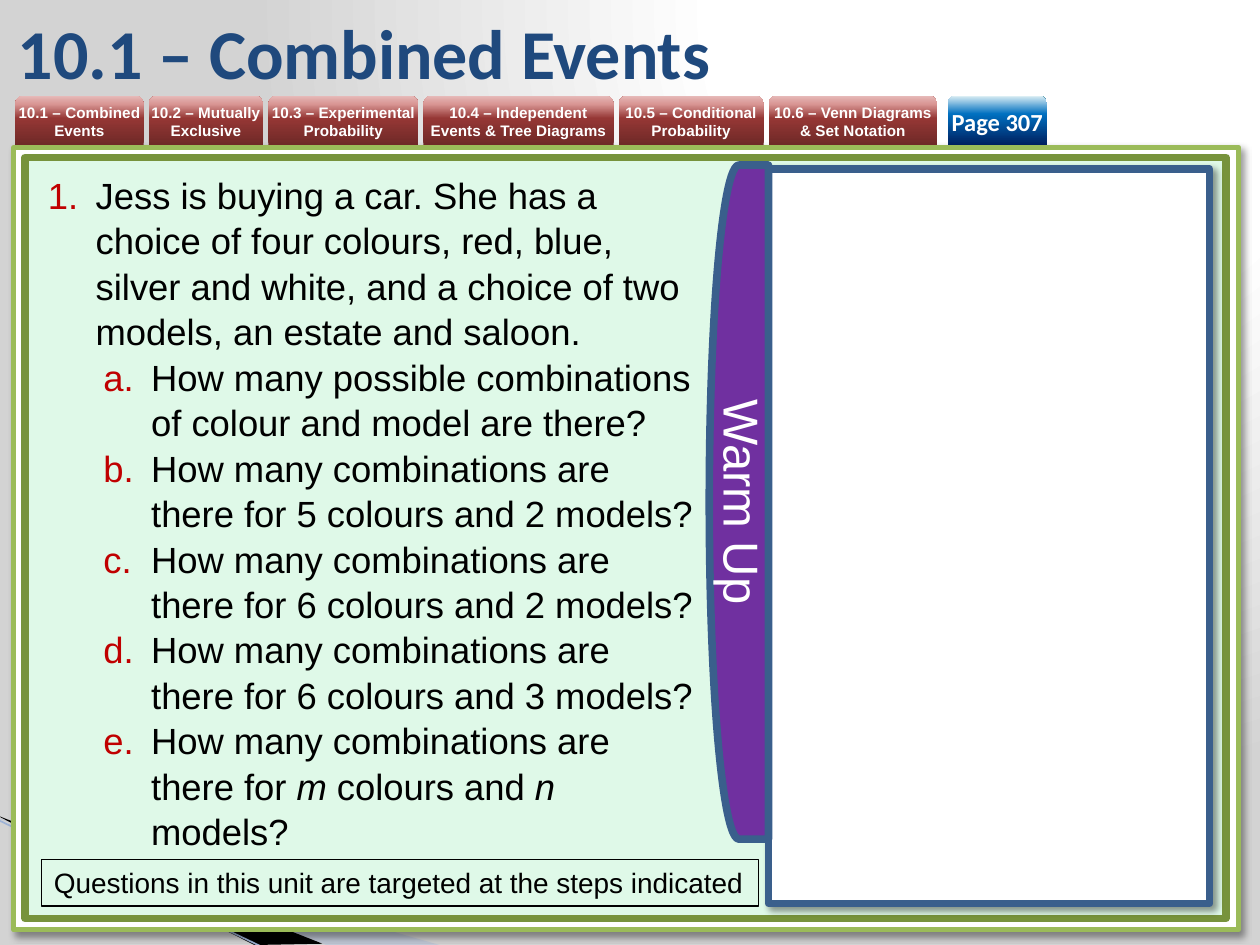
from lxml import etree
from pptx import Presentation
from pptx.dml.color import RGBColor
from pptx.enum.shapes import MSO_CONNECTOR, MSO_SHAPE
from pptx.enum.text import MSO_ANCHOR, MSO_AUTO_SIZE, PP_ALIGN
from pptx.oxml.ns import qn
from pptx.util import Inches, Pt

RECT = MSO_SHAPE.RECTANGLE
TAB = MSO_SHAPE.ROUND_2_SAME_RECTANGLE
DELAY = MSO_SHAPE.FLOWCHART_DELAY
STRAIGHT = MSO_CONNECTOR.STRAIGHT
LEFT, CENTER = PP_ALIGN.LEFT, PP_ALIGN.CENTER
TOP, MIDDLE = MSO_ANCHOR.TOP, MSO_ANCHOR.MIDDLE
NO_FIT = MSO_AUTO_SIZE.NONE

BLUE_EDGE = "3A5F8C"
UPWARD = ("lin", {"ang": "16200000", "scaled": "0"})
BACKDROP = [(0, "FFFFFF"), (40, "FFFFFF"), (100, "D3D3D3")]
RED_STOPS = [(0, "6F2927"), (54, "953735"), (83, "D99694"), (100, "E6B9B8")]
BLUE_STOPS = [(0, "002060"), (63, "0070C0"), (100, "DBEEF4")]
SECTIONS = [
    (0.12, 1.02, "10.1 – Combined Events"),
    (1.18, 0.91, "10.2 – Mutually Exclusive"),
    (2.13, 1.19, "10.3 – Experimental Probability"),
    (3.36, 1.51, "10.4 – Independent Events & Tree Diagrams"),
    (4.91, 1.15, "10.5 – Conditional Probability"),
    (6.1, 1.34, "10.6 – Venn Diagrams & Set Notation"),
]
STEM = ("Jess is buying a car. She has a choice of four colours, red, blue, "
        "silver and white, and a choice of two models, an estate and saloon.")
PARTS = [
    ["How many possible combinations of colour and model are there?"],
    ["How many combinations are there for 5 colours and 2 models?"],
    ["How many combinations are there for 6 colours and 2 models?"],
    ["How many combinations are there for 6 colours and 3 models?"],
    ["How many combinations are there for ", "m ", "colours and ", "n", " models?"],
]


def rgb(value):
    """Return the colour for a hex string."""
    return RGBColor.from_string(value)


def child(parent, tag, **attributes):
    """Append a drawing element with the given attributes."""
    return etree.SubElement(parent, qn(tag), attributes)


def write(paragraph, text, size=16, color="000000", font="Arial", bold=False,
          italic=False, align=LEFT, spacing=None):
    """Add a formatted run to a paragraph."""
    paragraph.alignment = align
    if spacing:
        paragraph.line_spacing = spacing
    run = paragraph.add_run()
    run.text = text
    run.font.size, run.font.name = Pt(size), font
    run.font.bold, run.font.italic = bold, italic
    run.font.color.rgb = rgb(color)


def paint_gradient(fill, holder, stops, tag, attributes):
    """Give a fill the colour stops and a linear or circular direction."""
    fill.gradient()
    gradient = next(holder.iter(qn("a:gradFill")))
    for part in list(gradient):
        gradient.remove(part)
    stop_list = child(gradient, "a:gsLst")
    for position, color in stops:
        stop = child(stop_list, "a:gs", pos=str(position * 1000))
        child(stop, "a:srgbClr", val=color)
    return child(gradient, "a:" + tag, **attributes)


def place(shape, left, top, width, height):
    """Move and size a shape in inches."""
    shape.left, shape.top = Inches(left), Inches(top)
    shape.width, shape.height = Inches(width), Inches(height)


def add_panel(slide, box, fill=None, line=None, weight=4.33, kind=RECT, raised=False):
    """Add a preset shape with a plain fill, an outline and maybe a shadow."""
    panel = slide.shapes.add_shape(kind, *map(Inches, box))
    panel.shadow.inherit = False
    if fill:
        panel.fill.solid()
        panel.fill.fore_color.rgb = rgb(fill)
    else:
        panel.fill.background()
    if line:
        panel.line.color.rgb = rgb(line)
        panel.line.width = Pt(weight)
    else:
        panel.line.fill.background()
    if raised:
        effects = panel._element.spPr.find(qn("a:effectLst"))
        shadow = child(effects, "a:outerShdw", blurRad=str(Pt(4)), dist=str(Pt(3)),
                       dir="2700000", algn="tl", rotWithShape="0")
        child(child(shadow, "a:srgbClr", val="000000"), "a:alpha", val="40000")
    return panel


def add_tab(slide, left, width, label, stops, **text_format):
    """Add a navigation tab with a vertical gradient."""
    tab = add_panel(slide, (left, 0.76, width, 0.39), kind=TAB)
    paint_gradient(tab.fill, tab._element.spPr, stops, *UPWARD)
    frame = tab.text_frame
    frame.margin_left = frame.margin_right = frame.margin_top = frame.margin_bottom = 0
    frame.vertical_anchor, frame.word_wrap = MIDDLE, True
    write(frame.paragraphs[0], label, color="FFFFFF", bold=True, align=CENTER, **text_format)


def add_wedge(slide, points, color, alpha=100):
    """Add a closed corner wedge through points in inches."""
    corners = [(Inches(x), Inches(y)) for x, y in points]
    builder = slide.shapes.build_freeform(*corners[0], scale=1.0)
    builder.add_line_segments(corners[1:], close=True)
    wedge = builder.convert_to_shape()
    wedge.shadow.inherit = False
    wedge.fill.solid()
    wedge.fill.fore_color.rgb = rgb(color)
    wedge.line.fill.background()
    child(next(wedge._element.spPr.iter(qn("a:srgbClr"))), "a:alpha", val=str(alpha * 1000))


def add_corner(slide):
    """Draw the decoration in the lower left corner."""
    add_wedge(slide, [(-0.01, 6.5), (3.49, 7.5), (2.59, 7.5), (-0.01, 6.49)], "A7B9DB", 40)
    add_wedge(slide, [(0, 6.48), (2.56, 7.49), (2.02, 7.5), (0.01, 6.49)], "000000")
    edge = slide.shapes.add_connector(STRAIGHT, *map(Inches, (-0.01, 6.51, 2.09, 7.52)))
    edge.line.color.rgb = rgb("9EB3D6")
    edge.line.width = Pt(0.95)
    child(edge._element.spPr, "a:effectLst")


def add_question(paragraph, runs, level, margin, numbering):
    """Write one numbered question, with every second run in italics."""
    paragraph.level = level
    paragraph.space_before = Pt(0)
    paragraph.line_spacing = 1.04
    properties = paragraph._p.get_or_add_pPr()
    properties.set("marL", str(Inches(margin)))
    properties.set("indent", str(Inches(-0.38)))
    child(child(properties, "a:buClr"), "a:srgbClr", val="C00000")
    child(properties, "a:buFont", typeface="+mj-lt")
    child(properties, "a:buAutoNum", type=numbering)
    child(child(properties, "a:tabLst"), "a:tab", pos=str(Inches(3)), algn="l")
    for index, text in enumerate(runs):
        write(paragraph, text, size=20.8, italic=index % 2 == 1)


def fill_placeholders(slide):
    """Write the title and questions and bring them above the panels."""
    title, questions = slide.shapes.title, slide.placeholders[1]
    place(title, 0.04, 0.05, 8.27, 0.71)
    place(questions, 0.28, 1.31, 5.35, 5.35)
    for holder, anchor in ((title, MIDDLE), (questions, TOP)):
        holder.text_frame.auto_size = NO_FIT
        holder.text_frame.vertical_anchor = anchor
        holder._element.getparent().append(holder._element)
    write(title.text_frame.paragraphs[0], "10.1 – Combined Events", size=40,
          color="1F497D", font="Calibri", bold=True)
    frame = questions.text_frame
    add_question(frame.paragraphs[0], [STEM], 0, 0.38, "arabicPeriod")
    for runs in PARTS:
        add_question(frame.add_paragraph(), runs, 1, 0.82, "alphaLcPeriod")


def main():
    """Build the warm up slide and save it."""
    deck = Presentation()
    deck.slide_width, deck.slide_height = Inches(10), Inches(7.5)
    slide = deck.slides.add_slide(deck.slide_layouts[1])
    focus = paint_gradient(slide.background.fill, slide._element, BACKDROP,
                           "path", {"path": "circle"})
    child(focus, "a:fillToRect", l="65000", t="0", r="0", b="98000")

    add_corner(slide)
    add_panel(slide, (0.11, 1.17, 9.72, 6.21), "FFFFFF", "9BBB59", 3, raised=True)
    add_panel(slide, (0.2, 1.25, 9.53, 6.04), "DFF9E8", "77933C")
    add_panel(slide, (6.1, 1.34, 3.5, 5.83), "FFFFFF", BLUE_EDGE, raised=True)
    for left, width, label in SECTIONS:
        add_tab(slide, left, width, label, RED_STOPS, size=8.7, spacing=Pt(10))
    add_tab(slide, 7.52, 0.79, "Page 307", BLUE_STOPS, size=14, font="Calibri")
    fill_placeholders(slide)

    target = add_panel(slide, (0.33, 6.82, 5.69, 0.37), line="000000", weight=0.75)
    target.text_frame.vertical_anchor = TOP
    write(target.text_frame.paragraphs[0],
          "Questions in this unit are targeted at the steps indicated")

    warm_up = add_panel(slide, (5.63, 1.31, 0.47, 5.35), "7030A0", BLUE_EDGE, kind=DELAY)
    warm_up._element.spPr.xfrm.set("flipH", "1")
    warm_up.text_frame._txBody.bodyPr.set("vert", "vert")
    warm_up.text_frame.vertical_anchor = MIDDLE
    write(warm_up.text_frame.paragraphs[0], "Warm Up", size=28, color="FFFFFF", align=CENTER)
    deck.save("out.pptx")


if __name__ == "__main__":
    main()
